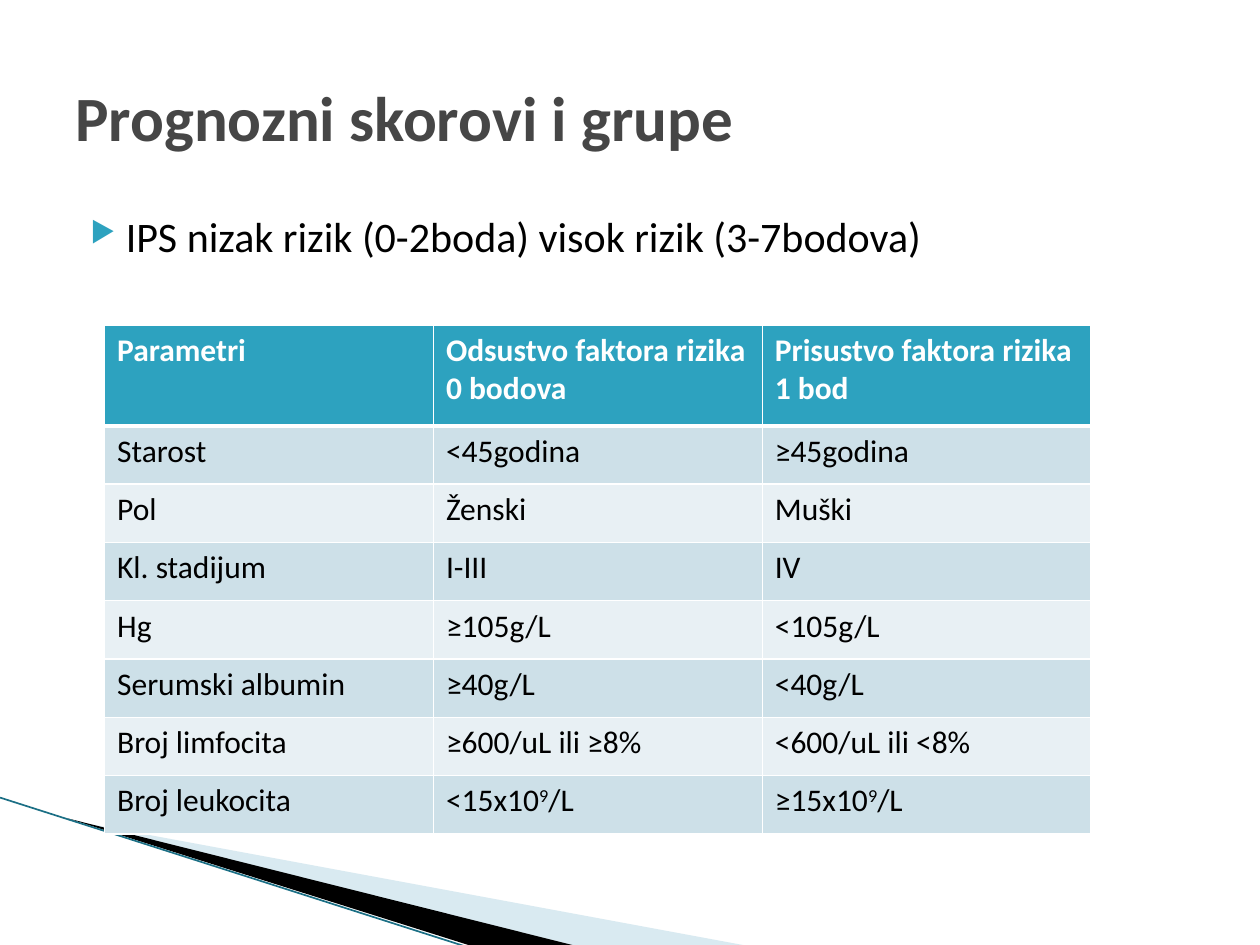
from lxml.etree import SubElement
from pptx import Presentation
from pptx.dml.color import RGBColor
from pptx.enum.text import MSO_ANCHOR
from pptx.oxml.ns import qn
from pptx.util import Inches, Pt

WIDTH, HEIGHT = 10, 7.5
FONT = "Calibri"
TEAL = RGBColor(0x2D, 0xA2, 0xBF)
DARK_TEAL = RGBColor(0x1B, 0x6F, 0x85)
PALE_TEAL = RGBColor(0xA0, 0xCB, 0xDC)
BAND_DARK = RGBColor(0xCD, 0xE0, 0xE8)
BAND_LIGHT = RGBColor(0xE8, 0xF0, 0xF4)
GREY = RGBColor(0x46, 0x46, 0x46)
BLACK = RGBColor(0, 0, 0)
WHITE = RGBColor(0xFF, 0xFF, 0xFF)

TITLE_BOX = (0.5, 0.3, 9, 1.25)
BODY_BOX = (0.5, 1.62, 9, 0.7)
TABLE_BOX = (0.83, 2.58, 7.83, 4.04)
SWOOSH_BOX = (0, 6.33, 5.95, 1.18)
HEADER_HEIGHT = 0.8

ROWS = [
    ("Parametri", "Odsustvo faktora rizika 0 bodova", "Prisustvo faktora rizika 1 bod"),
    ("Starost", "˂45godina", "≥45godina"),
    ("Pol", "Ženski", "Muški"),
    ("Kl. stadijum", "I-III", "IV"),
    ("Hg", "≥105g/L", "˂105g/L"),
    ("Serumski albumin", "≥40g/L", "˂40g/L"),
    ("Broj limfocita", "≥600/uL ili ≥8%", "˂600/uL ili ˂8%"),
    ("Broj leukocita", "˂15x10^9^/L", "≥15x10^9^/L"),
]


def add_text(p, text, size, color, bold=False):
    """Add runs to a paragraph; text between carets is superscript."""
    for i, part in enumerate(text.split("^")):
        r = p.add_run()
        r.text = part
        style = {"name": FONT, "size": Pt(size), "bold": bold}
        for name, value in style.items():
            setattr(r.font, name, value)
        r.font.color.rgb = color
        if i % 2:
            r.font._element.set("baseline", "30000")


def add_textbox(s, box, anchor):
    tf = s.shapes.add_textbox(*map(Inches, box)).text_frame
    tf.word_wrap = True
    tf.vertical_anchor = anchor
    return tf.paragraphs[0]


def add_title(s, box):
    add_text(add_textbox(s, box, MSO_ANCHOR.MIDDLE), "Prognozni skorovi i grupe", 36, GREY, True)


def add_body(s, box):
    p = add_textbox(s, box, MSO_ANCHOR.TOP)
    pPr = p._p.get_or_add_pPr()
    pPr.set("marL", str(Inches(0.4)))
    pPr.set("indent", str(Inches(-0.28)))
    SubElement(SubElement(pPr, qn("a:buClr")), qn("a:srgbClr"), val=str(TEAL))
    SubElement(pPr, qn("a:buSzPct"), val="68000")
    SubElement(pPr, qn("a:buChar"), char="▶")
    add_text(p, "IPS nizak rizik (0-2boda) visok rizik (3-7bodova)", 24, BLACK)


def set_borders(cell, widths):
    tcPr = cell._tc.get_or_add_tcPr()
    for side, width in zip("LRTB", widths):
        ln = SubElement(tcPr, qn(f"a:ln{side}"), w=str(Pt(width)))
        SubElement(SubElement(ln, qn("a:solidFill")), qn("a:srgbClr"), val=str(WHITE))


def add_score_table(s, box):
    table = s.shapes.add_table(len(ROWS), len(ROWS[0]), *map(Inches, box)).table
    row_height = (box[3] - HEADER_HEIGHT) / (len(ROWS) - 1)
    for i, texts in enumerate(ROWS):
        header = i == 0
        table.rows[i].height = Inches(HEADER_HEIGHT if header else row_height)
        fill = TEAL if header else (BAND_LIGHT, BAND_DARK)[i % 2]
        for j, text in enumerate(texts):
            cell = table.cell(i, j)
            set_borders(cell, (1, 1, 3 if i == 1 else 1, 3 if header else 1))
            cell.fill.solid()
            cell.fill.fore_color.rgb = fill
            add_text(cell.text_frame.paragraphs[0], text, 18, WHITE if header else BLACK, header)


def add_swoosh(s, box):
    """Draw the corner wedges and their edge line, with points as shares of the box."""
    left, top, width, height = box

    def place(x, y):
        return Inches(left + x * width), Inches(top + y * height)

    wedges = [
        ([(0.09, 0.15), (1, 1), (0.77, 1)], PALE_TEAL, 40),
        ([(0.09, 0.14), (0.77, 1), (0.63, 1)], BLACK, 100),
    ]
    for points, color, opacity in wedges:
        start, *rest = [place(x, y) for x, y in points]
        builder = s.shapes.build_freeform(*start)
        builder.add_line_segments(rest)
        sp = builder.convert_to_shape()
        sp.shadow.inherit = False
        sp.line.fill.background()
        sp.fill.solid()
        sp.fill.fore_color.rgb = color
        if opacity < 100:
            clr = sp._element.spPr.find(f"{qn('a:solidFill')}/{qn('a:srgbClr')}")
            SubElement(clr, qn("a:alpha"), val=str(opacity * 1000))
    edge = s.shapes.add_connector(1, *place(0, 0), *place(0.62, 1))
    edge.line.color.rgb = DARK_TEAL
    edge.line.width = Pt(0.95)
    SubElement(edge._element.spPr, qn("a:effectLst"))


def main():
    prs = Presentation()
    prs.slide_width, prs.slide_height = Inches(WIDTH), Inches(HEIGHT)
    s = prs.slides.add_slide(prs.slide_layouts[6])
    add_swoosh(s, SWOOSH_BOX)
    add_body(s, BODY_BOX)
    add_title(s, TITLE_BOX)
    add_score_table(s, TABLE_BOX)
    prs.save("out.pptx")


if __name__ == "__main__":
    main()
